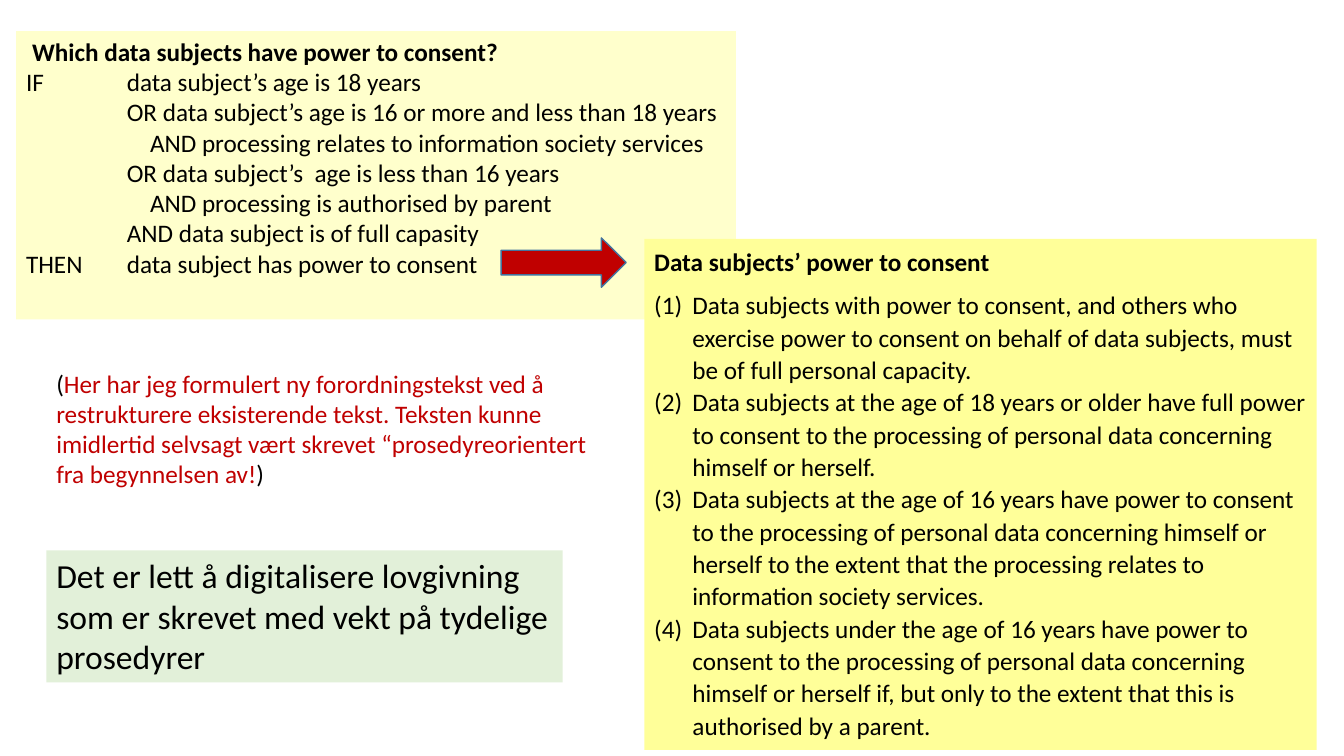
from lxml import etree
from pptx import Presentation
from pptx.dml.color import RGBColor
from pptx.enum import shapes, text
from pptx.oxml.ns import qn
from pptx.util import Inches, Pt

THEME = {
    "font": "Calibri", "body": 18, "large": 24,
    "black": "000000", "red": "C00000", "outline": "43739E",
    "cream": "FFFFCC", "yellow": "FFFF99", "green": "E2F0D9",
}
CLAUSE, CONDITION, HANGING = 1.0, 1.23, 0.38

# Each paragraph: (runs, format); each run: (words, bold, colour)
RULE_TITLE = "Which data subjects have power to consent?"
RULE_LINES = [
    ("IF\tdata subject’s age is 18 years", CLAUSE),
    ("OR data subject’s age is 16 or more and less than 18 years", CLAUSE),
    ("AND processing relates to information society services", CONDITION),
    ("OR data subject’s  age is less than 16 years", CLAUSE),
    ("AND processing is authorised by parent", CONDITION),
    ("AND data subject is of full capasity", CLAUSE),
    ("THEN\tdata subject has power to consent", CLAUSE),
]
ARTICLE_TITLE = "Data subjects’ power to consent"
ARTICLE_ITEMS = [
    "Data subjects with power to consent, and others who exercise power to consent "
    "on behalf of data subjects, must be of full personal capacity.",
    "Data subjects at the age of 18 years or older have full power to consent to the "
    "processing of personal data concerning himself or herself.",
    "Data subjects at the age of 16 years have power to consent to the processing of "
    "personal data concerning himself or herself to the extent that the processing "
    "relates to information society services.",
    "Data subjects under the age of 16 years have power to consent to the processing "
    "of personal data concerning himself or herself if, but only to the extent that "
    "this is authorised by a parent.",
]
MESSAGE_LINES = [
    "Det er lett å digitalisere lovgivning",
    "som er skrevet med vekt på tydelige",
    "prosedyrer",
]
COMMENT_LINES = [
    [("(", False, "black"),
     ("Her har jeg formulert ny forordningstekst ved å", False, "red")],
    [("restrukturere eksisterende tekst. Teksten kunne", False, "red")],
    [("imidlertid selvsagt vært skrevet “prosedyreorientert", False, "red")],
    [("fra begynnelsen av!", False, "red"), (")", False, "black")],
]


def plain(words, bold=False):
    return [(words, bold, "black")]


def colour(name):
    return RGBColor.from_string(THEME[name])


def indent(paragraph, left, first=0, numbered=False):
    """Set left margin and first-line offset in inches, with (1) numbering if asked."""
    properties = paragraph._p.get_or_add_pPr()
    properties.set("marL", str(Inches(left)))
    properties.set("indent", str(Inches(first)))
    if numbered:
        number = etree.SubElement(properties, qn("a:buAutoNum"))
        number.set("type", "arabicParenBoth")


def add_box(slide, place, fill, paragraphs, size="body"):
    place = [Inches(length) for length in place]
    if fill:
        box = slide.shapes.add_shape(shapes.MSO_SHAPE.RECTANGLE, *place)
        box.shadow.inherit = False
        box.fill.solid()
        box.fill.fore_color.rgb = colour(fill)
        box.line.fill.background()
    else:
        box = slide.shapes.add_textbox(*place)
    frame = box.text_frame
    frame.word_wrap = True
    frame.vertical_anchor = text.MSO_ANCHOR.TOP
    for index, (runs, layout) in enumerate(paragraphs):
        paragraph = frame.paragraphs[0] if index == 0 else frame.add_paragraph()
        paragraph.alignment = text.PP_ALIGN.LEFT
        for key in ("line_spacing", "space_after"):
            if key in layout:
                setattr(paragraph, key, layout[key])
        if "indent" in layout:
            indent(paragraph, *layout["indent"])
        for words, bold, tone in runs:
            run = paragraph.add_run()
            run.text = words
            font_values = {"name": THEME["font"], "size": Pt(THEME[size]), "bold": bold}
            for key, value in font_values.items():
                setattr(run.font, key, value)
            run.font.color.rgb = colour(tone)


def rule_paragraphs():
    yield plain(RULE_TITLE, True), {"indent": (0.06,)}
    for words, left in RULE_LINES:
        yield plain(words), {"indent": (left, -left if "\t" in words else 0)}


def article_paragraphs():
    spaced = {"line_spacing": 1.07, "space_after": Pt(8)}
    yield plain(ARTICLE_TITLE, True), spaced
    for item in ARTICLE_ITEMS:
        after = Pt(8 if item == ARTICLE_ITEMS[-1] else 0)
        yield plain(item), {"line_spacing": 1.07, "space_after": after,
                            "indent": (HANGING, -HANGING, True)}


def add_result_arrow(slide):
    arrow = slide.shapes.add_shape(
        shapes.MSO_SHAPE.RIGHT_ARROW, Inches(4.97), Inches(2.36), Inches(1.24), Inches(0.49))
    arrow.shadow.inherit = False
    arrow.fill.solid()
    arrow.fill.fore_color.rgb = colour("red")
    arrow.line.color.rgb = colour("outline")
    arrow.line.width = Pt(1)


def main():
    deck = Presentation()
    deck.slide_width, deck.slide_height = Inches(13.33), Inches(7.5)
    slide = deck.slides.add_slide(deck.slide_layouts[6])
    add_box(slide, (0.16, 0.31, 7.14, 2.86), "cream", rule_paragraphs())
    add_box(slide, (6.39, 2.37, 6.67, 5.07), "yellow", article_paragraphs())
    add_result_arrow(slide)
    add_box(slide, (0.46, 5.46, 5.12, 1.31), "green",
            [(plain(line), {}) for line in MESSAGE_LINES], "large")
    add_box(slide, (0.46, 3.6, 5.52, 1.31), None, [(runs, {}) for runs in COMMENT_LINES])
    deck.save("out.pptx")


if __name__ == "__main__":
    main()
